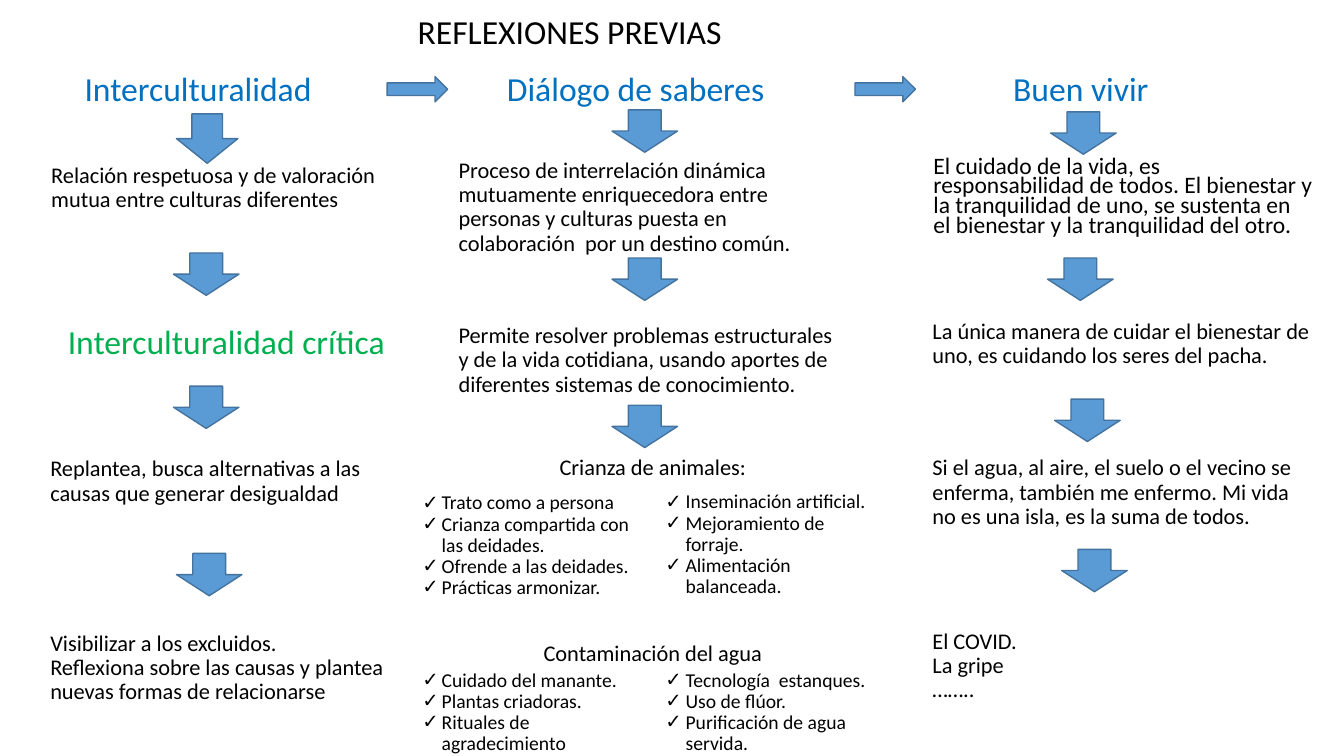
from dataclasses import dataclass

from lxml.etree import SubElement
from pptx import Presentation
from pptx.dml.color import RGBColor
from pptx.enum.shapes import MSO_SHAPE
from pptx.enum.text import MSO_ANCHOR, MSO_AUTO_SIZE, PP_ALIGN
from pptx.oxml.ns import qn
from pptx.util import Inches, Pt

BLACK = RGBColor(0x00, 0x00, 0x00)
BLUE = RGBColor(0x00, 0x70, 0xC0)
GREEN = RGBColor(0x00, 0xB0, 0x50)
FILL = RGBColor(0x5B, 0x9B, 0xD5)
EDGE = RGBColor(0x43, 0x73, 0x9E)
FONT = "Calibri"


@dataclass
class Block:
    text: str
    left: float
    top: float
    width: float
    height: float
    size: float = 16
    color: RGBColor = BLACK
    align: PP_ALIGN = PP_ALIGN.LEFT
    anchor: MSO_ANCHOR = MSO_ANCHOR.TOP
    leading: float = 0.9
    indent: float = 0


@dataclass
class Arrow:
    left: float
    top: float
    width: float = 0.65
    height: float = 0.42
    kind: MSO_SHAPE = MSO_SHAPE.DOWN_ARROW


def head(text: str, left: float, top: float, width: float) -> Block:
    return Block(text, left, top, width, 0.5, 24, BLUE, PP_ALIGN.CENTER, MSO_ANCHOR.BOTTOM)


def topic(text: str, top: float) -> Block:
    return Block(text, 4.34, top, 4.27, 0.29, align=PP_ALIGN.CENTER)


def write(shape, block: Block) -> None:
    """Place a shape and format its text."""
    shape.left, shape.top = Inches(block.left), Inches(block.top)
    shape.width, shape.height = Inches(block.width), Inches(block.height)
    frame = shape.text_frame
    frame.text = block.text
    frame.word_wrap = True
    frame.auto_size = MSO_AUTO_SIZE.NONE
    frame.vertical_anchor = block.anchor
    for para in frame.paragraphs:
        para.alignment = block.align
        para.line_spacing = block.leading
        para.space_before = para.space_after = Pt(0)
        if block.indent:
            props = para._p.get_or_add_pPr()
            props.set("marL", str(Inches(block.indent)))
            props.set("indent", str(-Inches(block.indent)))
            SubElement(props, qn("a:buChar")).set("char", "✓")
        for run in para.runs:
            run.font.name = FONT
            run.font.size = Pt(block.size)
            run.font.bold = False
            run.font.color.rgb = block.color


def draw(shapes, arrow: Arrow) -> None:
    shape = shapes.add_shape(arrow.kind, Inches(arrow.left), Inches(arrow.top),
                             Inches(arrow.width), Inches(arrow.height))
    shape.shadow.inherit = False
    shape.fill.solid()
    shape.fill.fore_color.rgb = FILL
    shape.line.color.rgb = EDGE
    shape.line.width = Pt(1)


TITLE = head("REFLEXIONES PREVIAS", 3.84, 0.06, 3.62)
TITLE.color = BLACK

# Check lists: habits on the left, techniques on the right
LISTS = [
    Block("Trato como a persona\nCrianza compartida con las deidades.\n"
          "Ofrende a las deidades.\nPrácticas armonizar.",
          4.09, 4.84, 2.35, 1.16, 14, indent=0.19),
    Block("Inseminación artificial.\nMejoramiento de forraje.\nAlimentación balanceada.",
          6.5, 4.83, 2.26, 1.17, 14, indent=0.2),
    Block("Cuidado del manante.\nPlantas criadoras.\nRituales de agradecimiento",
          4.09, 6.6, 2.35, 0.87, 14, indent=0.19),
    Block("Tecnología  estanques.\nUso de flúor.\nPurificación de agua servida.",
          6.5, 6.6, 2.26, 0.83, 14, indent=0.2),
]

BLOCKS = [
    # Left column
    head("Interculturalidad", 0.41, 0.63, 3.11),
    Block("Relación respetuosa y de valoración mutua entre culturas diferentes",
          0.41, 1.58, 3.69, 0.68),
    Block("Interculturalidad crítica", 0.4, 3.18, 3.69, 0.68, 24, GREEN, PP_ALIGN.CENTER),
    Block("Replantea, busca alternativas a las causas que generar desigualdad",
          0.4, 4.49, 3.69, 0.68),
    Block("Visibilizar a los excluidos.\n"
          "Reflexiona sobre las causas y plantea nuevas formas de relacionarse",
          0.4, 6.22, 3.69, 0.87),
    # Middle column
    head("Diálogo de saberes", 4.63, 0.63, 3.35),
    Block("Proceso de interrelación dinámica mutuamente enriquecedora entre personas "
          "y culturas puesta en colaboración  por un destino común.",
          4.45, 1.53, 4.04, 0.99),
    Block("Permite resolver problemas estructurales y de la vida cotidiana, usando "
          "aportes de diferentes sistemas de conocimiento.", 4.45, 3.17, 4.04, 0.91),
    topic("Crianza de animales:", 4.48),
    topic("Contaminación del agua", 6.32),
    # Right column
    head("Buen vivir", 8.91, 0.63, 3.62),
    Block("El cuidado de la vida, es responsabilidad de todos. El bienestar y la "
          "tranquilidad de uno, se sustenta en el bienestar y la tranquilidad del otro.",
          9.16, 1.52, 3.96, 0.95, 16.8, leading=0.7),
    Block("La única manera de cuidar el bienestar de uno, es cuidando los seres del pacha.",
          9.15, 3.13, 3.96, 0.74),
    Block("Si el agua, al aire, el suelo o el vecino se enferma, también me enfermo. "
          "Mi vida no es una isla, es la suma de todos.", 9.15, 4.48, 3.96, 0.95),
    Block("El COVID.\nLa gripe\n……..", 9.15, 6.2, 3.96, 0.95),
]

ARROWS = [
    # Between headings
    *(Arrow(left, 0.76, 0.6, 0.25, MSO_SHAPE.RIGHT_ARROW) for left in (3.84, 8.48)),
    # Down each column
    Arrow(1.75, 1.13, 0.61, 0.49),
    Arrow(1.72, 2.51), Arrow(1.72, 3.83), Arrow(1.75, 5.49),
    *(Arrow(6.07, top) for top in (1.09, 2.56, 4.02)),
    Arrow(10.42, 1.11), Arrow(10.39, 2.56), Arrow(10.46, 3.96), Arrow(10.53, 5.45),
]


def main() -> None:
    deck = Presentation()
    deck.slide_width, deck.slide_height = Inches(13.33), Inches(7.5)
    # The comparison layout holds a title and four bodies
    slide = deck.slides.add_slide(deck.slide_layouts[4])
    for holder, block in zip(slide.placeholders, [TITLE, *LISTS]):
        write(holder, block)
    for block in BLOCKS:
        write(slide.shapes.add_textbox(0, 0, 0, 0), block)
    for arrow in ARROWS:
        draw(slide.shapes, arrow)
    deck.save("out.pptx")


if __name__ == "__main__":
    main()
